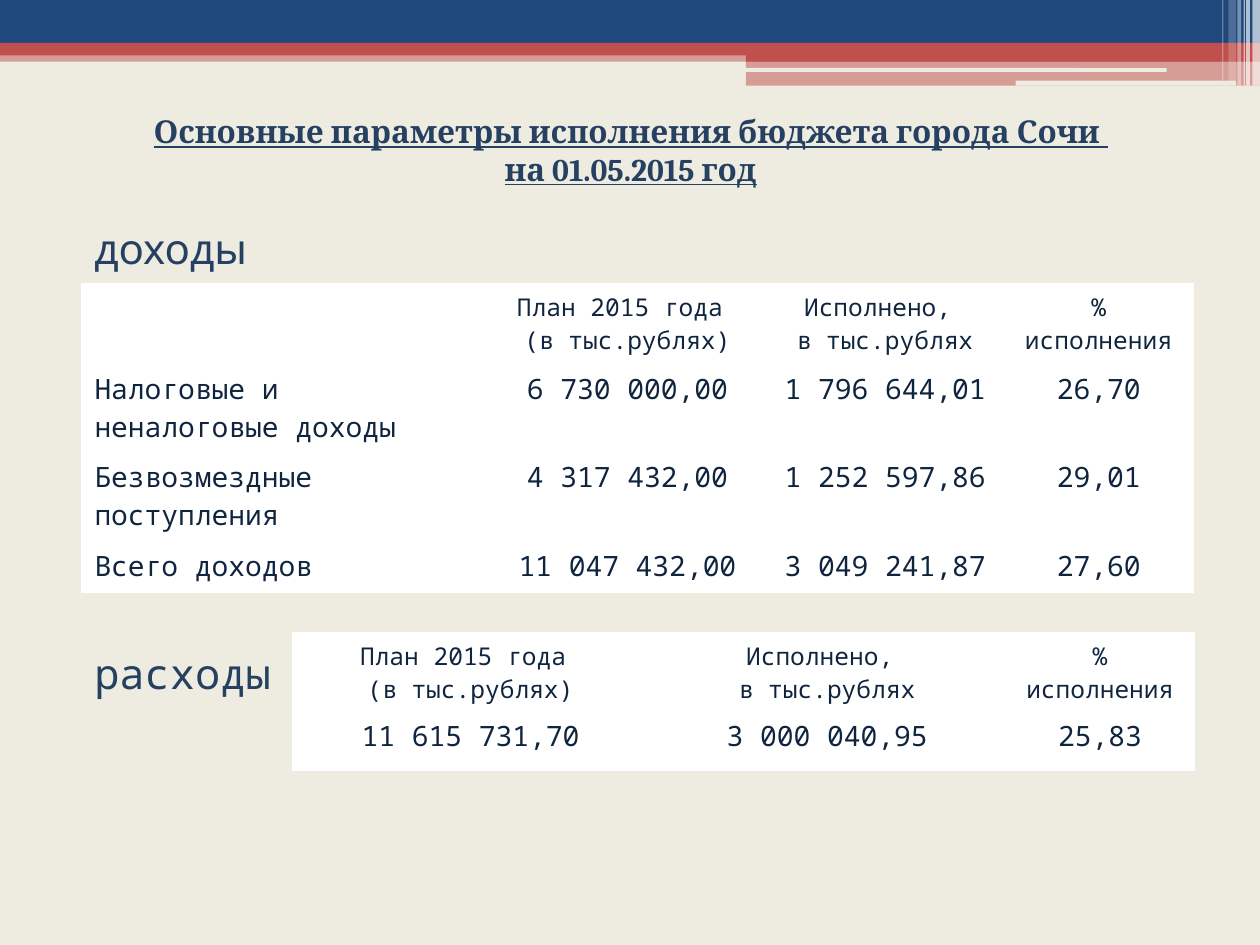
from collections import namedtuple
from dataclasses import dataclass

from lxml.etree import SubElement
from pptx import Presentation
from pptx.dml.color import RGBColor
from pptx.enum.shapes import MSO_SHAPE
from pptx.enum.text import MSO_AUTO_SIZE, PP_ALIGN
from pptx.oxml.ns import qn
from pptx.util import Emu, Pt

Box = namedtuple("Box", "left top width height")
PX = 9144  # EMU in one px, 100 px to the inch


@dataclass(frozen=True)
class Theme:
    paper: str = "EEECE1"
    navy: str = "1F497D"
    red: str = "C0504D"
    white: str = "FFFFFF"
    heading: str = "254061"
    ink: str = "0F243E"
    title_font: str = "Cambria"
    label_font: str = "Cabin"
    mono_font: str = "Noto Sans Mono"
    title_size: int = 18
    label_size: int = 24
    header_size: int = 14
    body_size: int = 16


THEME = Theme()
HEADERS = ["План 2015 года \n(в тыс.рублях)", "Исполнено, \nв тыс.рублях", "% исполнения"]
INCOME = [
    ["", *HEADERS],
    ["Налоговые и неналоговые доходы", "6 730 000,00", "1 796 644,01", "26,70"],
    ["Безвозмездные поступления", "4 317 432,00", "1 252 597,86", "29,01"],
    ["Всего доходов", "11 047 432,00", "3 049 241,87", "27,60"],
]
EXPENSES = [HEADERS, ["11 615 731,70", "3 000 040,95", "25,83"]]


def emu(box):
    return [Emu(length * PX) for length in box]


def inside(box, left, top, width, height):
    return Box(box.left + left, box.top + top, width, height)


def style_text(frame, font, size, color, align, bold=None, underline=None):
    for para in frame.paragraphs:
        para.alignment = align
        for span in para.runs:
            span.font.name = font
            span.font.size = Pt(size)
            span.font.color.rgb = RGBColor.from_string(color)
            span.font.bold = bold
            span.font.underline = underline


def add_bar(page, box, color, opacity=100, rounded=False):
    kind = MSO_SHAPE.ROUNDED_RECTANGLE if rounded else MSO_SHAPE.RECTANGLE
    bar = page.shapes.add_shape(kind, *emu(box))
    bar.shadow.inherit = False
    bar.line.fill.background()
    bar.fill.solid()
    bar.fill.fore_color.rgb = RGBColor.from_string(color)
    if opacity < 100:
        tint = bar.fill._xPr.find(qn("a:solidFill"))[0]
        SubElement(tint, qn("a:alpha"), val=str(opacity * 1000))


def add_text(page, box, text, font, size, align=PP_ALIGN.LEFT, **emphasis):
    frame = page.shapes.add_textbox(*emu(box)).text_frame
    frame.word_wrap = True
    frame.auto_size = MSO_AUTO_SIZE.SHAPE_TO_FIT_TEXT
    frame.text = text
    style_text(frame, font, size, THEME.heading, align, **emphasis)


def set_borders(cell, color, bottom):
    properties = cell._tc.get_or_add_tcPr()
    for side, points in (("L", 1), ("R", 1), ("T", 1), ("B", bottom)):
        edge = SubElement(properties, qn(f"a:ln{side}"), w=str(Pt(points)))
        SubElement(SubElement(edge, qn("a:solidFill")), qn("a:srgbClr"), val=color)


def add_budget_table(page, box, rows, widths, heights, named_rows=False):
    table = page.shapes.add_table(len(rows), len(widths), *emu(box)).table
    table.first_row = table.horz_banding = False
    for column, width in zip(table.columns, widths):
        column.width = Emu(width * PX)
    for row, height in zip(table.rows, heights):
        row.height = Emu(height * PX)
    for r, values in enumerate(rows):
        for c, value in enumerate(values):
            cell = table.cell(r, c)
            set_borders(cell, THEME.white, bottom=1 if r else 3)
            cell.fill.solid()
            cell.fill.fore_color.rgb = RGBColor.from_string(THEME.white)
            cell.text_frame.text = value
            size = THEME.body_size if r else THEME.header_size
            align = PP_ALIGN.LEFT if named_rows and c == 0 else PP_ALIGN.CENTER
            style_text(cell.text_frame, THEME.mono_font, size, THEME.ink, align)


def add_banner(page, box):
    # Full-width bands
    add_bar(page, inside(box, 0, 40, box.width, 9), THEME.red, 50)
    add_bar(page, inside(box, 0, 0, box.width, 34), THEME.navy)
    add_bar(page, inside(box, 0, 34, box.width, 10), THEME.red)
    # Step at the right
    add_bar(page, inside(box, 592, 39, 408, 10), THEME.red)
    add_bar(page, inside(box, 592, 48, 408, 20), THEME.red, 50)
    add_bar(page, inside(box, 591, 54, 335, 3), THEME.paper, rounded=True)
    add_bar(page, inside(box, 806, 64, 175, 4), THEME.paper, rounded=True)
    # Pale vertical stripes: left, width, height, opacity
    for left, width, height, opacity in (
        (994, 6, 68, 65), (989, 3, 68, 65), (987, 1, 68, 60),
        (982, 3, 68, 40), (975, 6, 64, 20), (970, 1, 64, 30),
    ):
        add_bar(page, inside(box, left, 0, width, height), THEME.white, opacity)


def add_title(page, box):
    add_text(page, box, "Основные параметры исполнения бюджета города Сочи \nна 01.05.2015 год",
             THEME.title_font, THEME.title_size, PP_ALIGN.CENTER, bold=True, underline=True)


def add_income(page, box):
    add_budget_table(page, inside(box, 0, 53, box.width, 164), INCOME,
                     [323, 220, 189, 150], [41] * len(INCOME), named_rows=True)
    add_text(page, inside(box, 0, 0, 220, 50), "доходы", THEME.label_font, THEME.label_size)


def add_expenses(page, box):
    add_text(page, inside(box, 0, 7, 220, 50), "расходы", THEME.mono_font, THEME.label_size)
    add_budget_table(page, inside(box, 167, 0, 717, 109), EXPENSES, [283, 283, 150], [62, 47])


def main():
    deck = Presentation()
    deck.slide_width, deck.slide_height = Emu(1000 * PX), Emu(750 * PX)
    page = deck.slides.add_slide(deck.slide_layouts[6])
    page.background.fill.solid()
    page.background.fill.fore_color.rgb = RGBColor.from_string(THEME.paper)
    add_banner(page, Box(0, 0, 1000, 68))
    add_income(page, Box(65, 172, 882, 254))
    add_expenses(page, Box(65, 502, 884, 109))
    add_title(page, Box(24, 84, 953, 71))
    deck.save("out.pptx")


if __name__ == "__main__":
    main()
